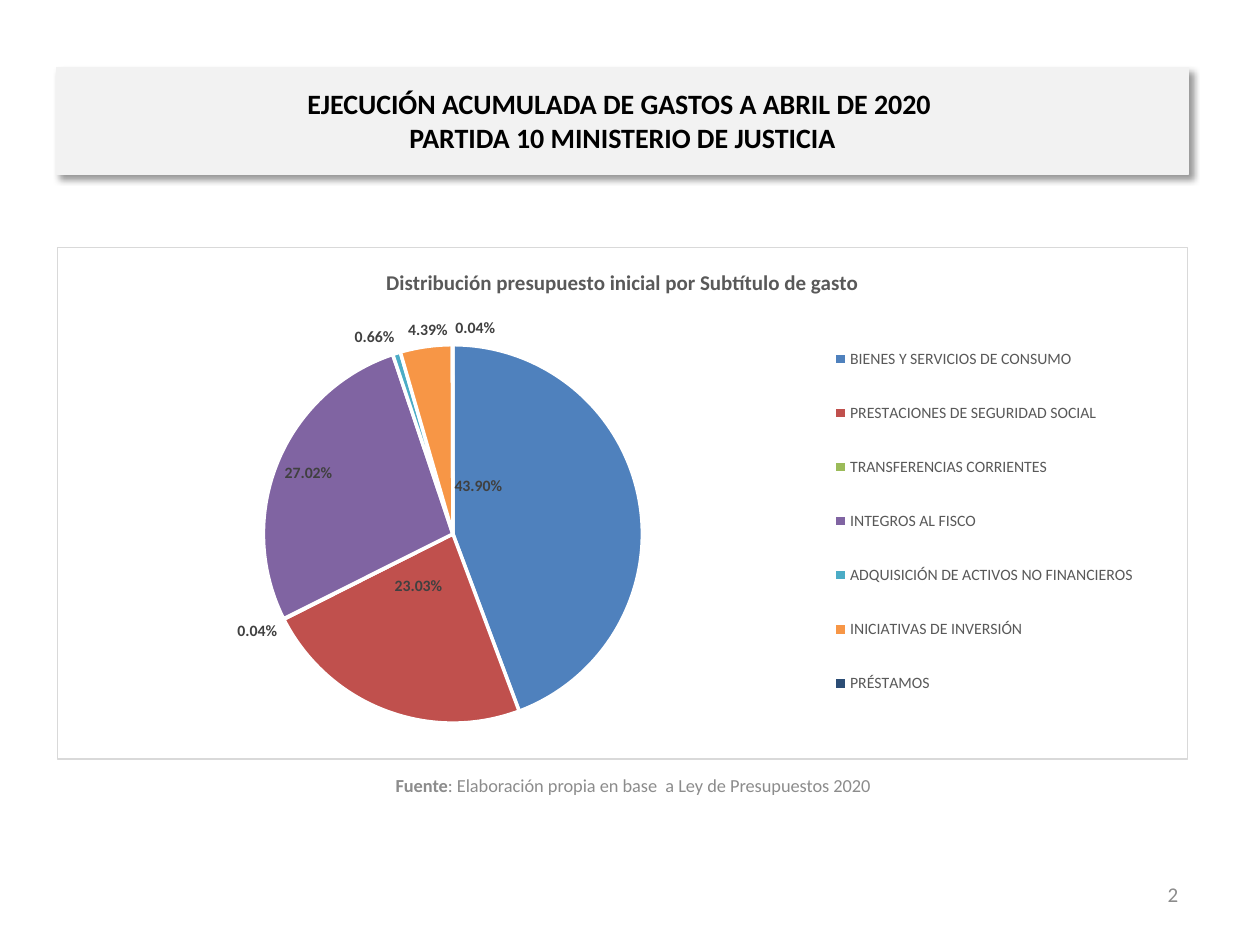
from dataclasses import dataclass

from lxml import etree
from pptx import Presentation
from pptx.chart.data import CategoryChartData
from pptx.dml.color import RGBColor
from pptx.enum.chart import XL_CHART_TYPE, XL_LABEL_POSITION, XL_LEGEND_POSITION
from pptx.enum.text import MSO_ANCHOR, MSO_AUTO_SIZE, PP_ALIGN
from pptx.oxml import parse_xml
from pptx.oxml.ns import nsdecls, qn
from pptx.util import Pt

PIE = XL_CHART_TYPE.PIE
CENTER_LABEL = XL_LABEL_POSITION.CENTER
INSIDE_LABEL = XL_LABEL_POSITION.INSIDE_END
OUTSIDE_LABEL = XL_LABEL_POSITION.OUTSIDE_END
LEGEND_RIGHT = XL_LEGEND_POSITION.RIGHT
MIDDLE = MSO_ANCHOR.MIDDLE
NO_AUTOFIT = MSO_AUTO_SIZE.NONE
CENTER = PP_ALIGN.CENTER
RIGHT = PP_ALIGN.RIGHT


@dataclass(frozen=True)
class Theme:
    """Colours and type sizes of the slide."""
    font: str = "Calibri"
    ink: str = "000000"
    white: str = "FFFFFF"
    banner: str = "F2F2F2"
    muted: str = "8C8C8C"
    chart_text: str = "595959"
    label_text: str = "404040"
    border: str = "D9D9D9"
    title_size: float = 16
    heading_size: float = 12
    chart_size: float = 10
    source_size: float = 10.5
    small_size: float = 9


THEME = Theme()

SLICES = [
    ("BIENES Y SERVICIOS DE CONSUMO", 0.439, "4F81BD", CENTER_LABEL, (-0.06, -0.06)),
    ("PRESTACIONES DE SEGURIDAD SOCIAL", 0.2303, "C0504D", CENTER_LABEL, (0, -0.07)),
    ("TRANSFERENCIAS CORRIENTES", 0.0004, "9BBB59", OUTSIDE_LABEL, None),
    ("INTEGROS AL FISCO", 0.2702, "8064A2", INSIDE_LABEL, None),
    ("ADQUISICIÓN DE ACTIVOS NO FINANCIEROS", 0.0066, "4BACC6", OUTSIDE_LABEL, None),
    ("INICIATIVAS DE INVERSIÓN", 0.0439, "F79646", OUTSIDE_LABEL, (0.02, 0)),
    ("PRÉSTAMOS", 0.0004, "2C4D75", OUTSIDE_LABEL, (0.02, 0)),
]


def apply_format(target, values):
    """Set every named attribute on the target."""
    for name, value in values.items():
        setattr(target, name, value)


def style_font(font, size, color, bold=False):
    """Give a font its face, size, weight and colour."""
    apply_format(font, {"name": THEME.font, "size": Pt(size), "bold": bold})
    font.color.rgb = RGBColor.from_string(color)


def place(shape, left, top, width, height):
    """Position a shape with lengths in points."""
    apply_format(shape, {"left": Pt(left), "top": Pt(top),
                         "width": Pt(width), "height": Pt(height)})


def add_span(para, text, size, color, bold=False):
    """Append a formatted run to a paragraph."""
    span = para.add_run()
    span.text = text
    style_font(span.font, size, color, bold)


def add_banner(page, lines):
    """Turn the title placeholder into a shadowed banner."""
    title = page.shapes.title
    place(title, 32.4, 38.4, 646.6, 61)
    title.fill.solid()
    title.fill.fore_color.rgb = RGBColor.from_string(THEME.banner)
    title.line.color.rgb = RGBColor.from_string(THEME.banner)
    title.line.width = Pt(0.75)
    title._element.spPr.append(parse_xml(
        f'<a:effectLst {nsdecls("a")}><a:outerShdw blurRad="{Pt(4)}" dist="{Pt(3)}" '
        f'dir="2700000" algn="tl" rotWithShape="0"><a:srgbClr val="{THEME.ink}">'
        '<a:alpha val="40000"/></a:srgbClr></a:outerShdw></a:effectLst>'))
    apply_format(title.text_frame, {"vertical_anchor": MIDDLE, "word_wrap": True,
                                    "auto_size": NO_AUTOFIT})
    para = title.text_frame.paragraphs[0]
    para.alignment = CENTER
    for index, line in enumerate(lines):
        if index:
            para.add_line_break()
        add_span(para, line, THEME.title_size, THEME.ink, True)


def add_note(page, bounds, alignment, size, spans):
    """Add a muted single-paragraph text box."""
    box = page.shapes.add_textbox(*(Pt(length) for length in bounds))
    apply_format(box.text_frame, {"word_wrap": True, "vertical_anchor": MIDDLE})
    para = box.text_frame.paragraphs[0]
    para.alignment = alignment
    for text, bold in spans:
        add_span(para, text, size, THEME.muted, bold)


def set_layout(parent, index, **values):
    """Replace the manual layout of a chart element."""
    for old in parent.findall(qn("c:layout")):
        parent.remove(old)
    layout = parse_xml(f'<c:layout {nsdecls("c")}><c:manualLayout/></c:layout>')
    for name, value in values.items():
        etree.SubElement(layout[0], qn(f"c:{name}")).set("val", str(value))
    parent.insert(index, layout)


def frame_chart(chart):
    """Give the chart area a white fill and a thin border."""
    chart._chartSpace.find(qn("c:txPr")).addprevious(parse_xml(
        f'<c:spPr {nsdecls("c", "a")}><a:solidFill><a:srgbClr val="{THEME.white}"/>'
        f'</a:solidFill><a:ln w="{Pt(0.75)}"><a:solidFill>'
        f'<a:srgbClr val="{THEME.border}"/></a:solidFill></a:ln></c:spPr>'))


def style_slices(plot):
    """Colour each slice and place its percentage label."""
    series = plot.series[0]
    labels = series.data_labels
    apply_format(labels, {"show_value": True, "number_format": "0.00%",
                          "number_format_is_linked": False})
    style_font(labels.font, THEME.small_size, THEME.label_text, True)
    for index, (_, _, color, position, offset) in enumerate(SLICES):
        point = series.points[index]
        point.format.fill.solid()
        point.format.fill.fore_color.rgb = RGBColor.from_string(color)
        point.format.line.color.rgb = RGBColor.from_string(THEME.white)
        point.format.line.width = Pt(2)
        style_font(point.data_label.font, THEME.small_size, THEME.label_text, True)
        point.data_label.position = position
        if offset:
            label = series._element.xpath(f".//c:dLbl[c:idx/@val='{index}']")[0]
            set_layout(label, 1, x=offset[0], y=offset[1])


def add_pie(page, heading):
    """Add the pie of the initial budget by kind of spending."""
    data = CategoryChartData(number_format="0.00%")
    data.categories = [row[0] for row in SLICES]
    data.add_series("Series 1", [row[1] for row in SLICES])
    chart = page.shapes.add_chart(PIE, Pt(32.4), Pt(141.1), Pt(646.6), Pt(293), data).chart
    style_font(chart.font, THEME.chart_size, THEME.ink)
    frame_chart(chart)
    chart.has_title = True
    add_span(chart.chart_title.text_frame.paragraphs[0], heading,
             THEME.heading_size, THEME.chart_text, True)
    chart.has_legend = True
    apply_format(chart.legend, {"position": LEGEND_RIGHT, "include_in_layout": False})
    style_font(chart.legend.font, THEME.small_size, THEME.chart_text)
    set_layout(chart.legend._element, 1, xMode="edge", yMode="edge",
               x=0.67, y=0.13, w=0.3, h=0.81)
    plot = chart.plots[0]
    plot.vary_by_categories = True
    set_layout(plot._element.getparent(), 0, layoutTarget="inner", xMode="edge",
               yMode="edge", x=0.18, y=0.19, w=0.34, h=0.74)
    style_slices(plot)


def main():
    """Build and save the slide."""
    deck = Presentation()
    apply_format(deck, {"slide_width": Pt(720), "slide_height": Pt(540)})
    page = deck.slides.add_slide(deck.slide_layouts[5])
    add_banner(page, ["EJECUCIÓN ACUMULADA DE GASTOS A ABRIL DE 2020 ",
                      "PARTIDA 10 MINISTERIO DE JUSTICIA"])
    add_pie(page, "Distribución presupuesto inicial por Subtítulo de gasto")
    add_note(page, (31, 434.2, 661.7, 28.8), CENTER, THEME.source_size,
             [("Fuente", True),
              (": Elaboración propia en base  a Ley de Presupuestos 2020", False)])
    add_note(page, (512.6, 496.8, 167.8, 28.8), RIGHT, THEME.heading_size, [("2", False)])
    deck.save("out.pptx")


if __name__ == "__main__":
    main()
